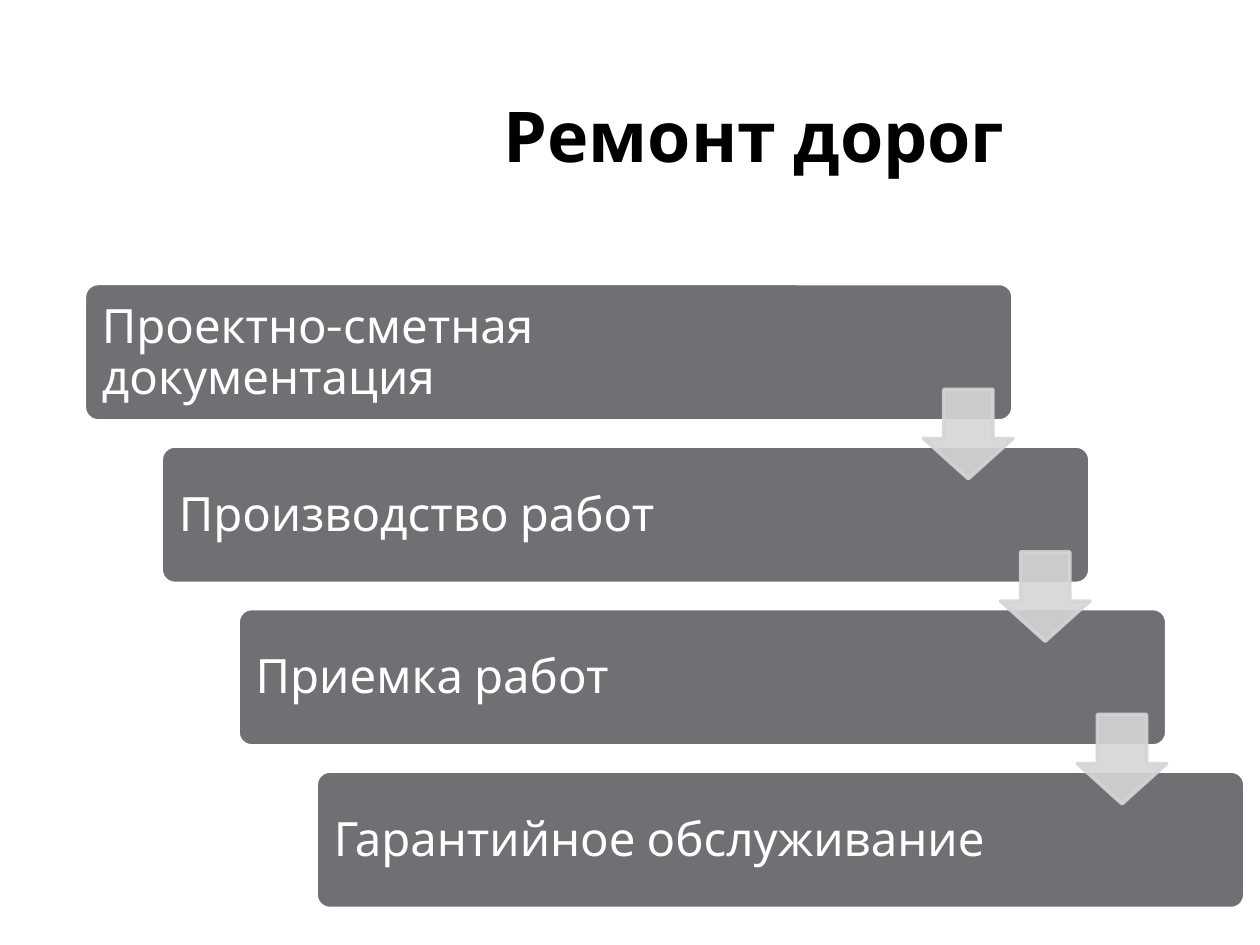
from dataclasses import dataclass

from lxml.etree import SubElement
from pptx import Presentation
from pptx.dml.color import RGBColor as RGB
from pptx.enum.shapes import MSO_SHAPE as Shape
from pptx.enum.text import MSO_ANCHOR as Anchor, PP_ALIGN as Align
from pptx.oxml.ns import qn
from pptx.util import Pt

PX = 9144  # EMU in one px, 100 px to the inch


@dataclass(frozen=True)
class Theme:
    font: str = "Karla"
    ink: RGB = RGB(0, 0, 0)
    paper: RGB = RGB(255, 255, 255)
    bar: RGB = RGB(0x6F, 0x6F, 0x74)
    arrow: RGB = RGB(0xD5, 0xD5, 0xD6)
    head: int = 40
    body: int = 27
    edge: int = 2


THEME = Theme()
STEPS = [
    "Проектно-сметная документация",
    "Производство работ",
    "Приемка работ",
    "Гарантийное обслуживание",
]


def scale(*box):
    return [n * PX for n in box]


def add_text(slide, box, text, size, color, align=Align.LEFT, inset=10,
             bold=False, gap=1.0):
    frame = slide.shapes.add_textbox(*scale(*box)).text_frame
    frame.word_wrap = True
    frame.vertical_anchor = Anchor.MIDDLE
    frame.margin_left = frame.margin_right = inset * PX
    frame.margin_top = frame.margin_bottom = inset * PX
    para = frame.paragraphs[0]
    para.alignment = align
    para.line_spacing = gap
    run = para.add_run()
    run.text = text
    font = run.font
    font.name, font.size, font.bold = THEME.font, Pt(size), bold
    font.color.rgb = color


def add_form(slide, kind, box, fill, edge, adjust):
    form = slide.shapes.add_shape(kind, *scale(*box))
    form.shadow.inherit = False
    form.fill.solid()
    form.fill.fore_color.rgb = fill
    form.line.color.rgb = edge
    form.line.width = Pt(THEME.edge)
    for i, value in enumerate(adjust):
        form.adjustments[i] = value
    return form


def add_bar(slide, box, text):
    x, y, w, h = box
    add_form(slide, Shape.ROUNDED_RECTANGLE, box, THEME.bar, THEME.paper, [0.1])
    add_text(slide, (x + 3, y + 4, 600, h - 6), text, THEME.body, THEME.paper,
             inset=11, gap=0.9)


def add_arrow(slide, box):
    form = add_form(slide, Shape.DOWN_ARROW, box, THEME.arrow, THEME.arrow,
                    [0.55, 0.45])
    # Fill and outline are both 90% opaque
    for color in form._element.spPr.iter(qn("a:srgbClr")):
        SubElement(color, qn("a:alpha"), val="90000")


def add_stairs(slide, box, steps):
    x, y, w, h = box
    wide, high, side = 737, 109, 71
    last = len(steps) - 1
    spots = [(x + (w - wide) * i // last, y + (h - high) * i // last)
             for i in range(len(steps))]
    # Bars, each one lower and further right
    for (left, top), text in zip(spots, steps):
        add_bar(slide, (left, top, wide, high), text)
    # Arrows from each bar to the next
    for left, top in spots[:-1]:
        add_arrow(slide, (left + wide - side, top + 84, side, side))


def main():
    deck = Presentation()
    deck.slide_width, deck.slide_height = scale(1000, 750)
    slide = deck.slides.add_slide(deck.slide_layouts[6])
    # Title
    add_text(slide, (319, 44, 559, 125), "Ремонт дорог", THEME.head, THEME.ink,
             align=Align.CENTER, bold=True)
    # Staircase of stages
    add_stairs(slide, (67, 225, 921, 496), STEPS)
    deck.save("out.pptx")


if __name__ == "__main__":
    main()
